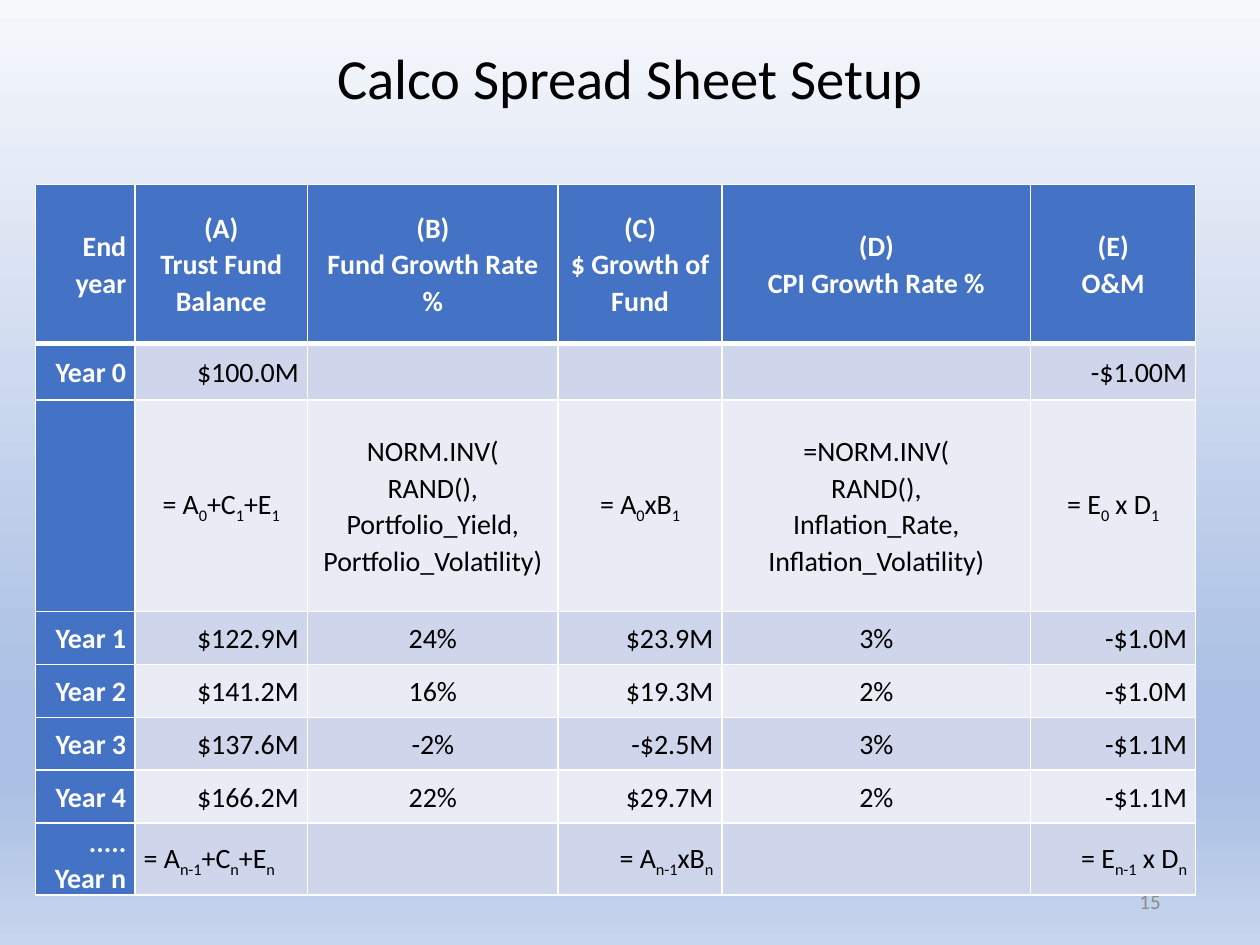
import dataclasses

import lxml.etree
import pptx
import pptx.dml.color
import pptx.enum.text
import pptx.oxml.ns
import pptx.util

Pt = pptx.util.Pt
qn = pptx.oxml.ns.qn
ALIGN = pptx.enum.text.PP_ALIGN
ANCHOR = pptx.enum.text.MSO_ANCHOR


@dataclasses.dataclass(frozen=True)
class Theme:
    font: str = "Calibri"
    ink: str = "000000"
    muted: str = "8C8C8C"
    white: str = "FFFFFF"
    accent: str = "4472C4"
    bands: tuple = ("CFD5EA", "E9EBF5")
    backdrop: tuple = ((0, "F6F8FC"), (74, "ABC0E4"), (83, "ABC0E4"), (100, "C7D5ED"))
    title_size: float = 32.4
    table_size: float = 16
    number_size: float = 12


THEME = Theme()

COLUMN_WIDTHS = (56.9, 98.6, 143.3, 93.6, 176.4, 94.3)
ROW_HEIGHTS = (90.7, 32.4, 121) + (30.2,) * 5
CELL_INSET = 5

# Line breaks separate paragraphs; tildes enclose subscripts
HEADER_ROW, FORMULA_ROW, LAST_ROW = 0, 2, 7
ROWS = (
    ("End year", "(A)\nTrust Fund Balance", "(B)\nFund Growth Rate %",
     "(C)\n$ Growth of Fund", "(D)\nCPI Growth Rate %", "(E)\nO&M"),
    ("Year 0", "$100.0M", "", "", "", "-$1.00M"),
    ("", "= A~0~+C~1~+E~1~",
     "NORM.INV(\nRAND(),\nPortfolio_Yield, Portfolio_Volatility)",
     "= A~0~xB~1~",
     "=NORM.INV(\nRAND(),\nInflation_Rate,\nInflation_Volatility)",
     "= E~0~ x D~1~"),
    ("Year 1", "$122.9M", "24%", "$23.9M", "3%", "-$1.0M"),
    ("Year 2", "$141.2M", "16%", "$19.3M", "2%", "-$1.0M"),
    ("Year 3", "$137.6M", "-2%", "-$2.5M", "3%", "-$1.1M"),
    ("Year 4", "$166.2M", "22%", "$29.7M", "2%", "-$1.1M"),
    ("..... Year n", "= A~n-1~+C~n~+E~n~", "", "= A~n-1~xB~n~", "",
     "= E~n-1~ x D~n~"),
)


def rgb(value):
    return pptx.dml.color.RGBColor.from_string(value)


def write_text(frame, text, *, size, color=THEME.ink, bold=False,
               align=ALIGN.LEFT, spacing=1.0):
    """Fill a text frame with formatted paragraphs and subscripts."""
    frame.word_wrap = True
    for index, line in enumerate(text.split("\n")):
        paragraph = frame.paragraphs[0] if index == 0 else frame.add_paragraph()
        paragraph.alignment = align
        paragraph.line_spacing = spacing
        for position, piece in enumerate(line.split("~")):
            if not piece:
                continue
            run = paragraph.add_run()
            run.text = piece
            run.font.name = THEME.font
            run.font.size = Pt(size)
            run.font.bold = bold
            run.font.color.rgb = rgb(color)
            if position % 2:
                run.font._element.set("baseline", "-25000")


def set_background(slide):
    fill = slide.background.fill
    fill.gradient()
    fill.gradient_angle = 270  # counter-clockwise, so top to bottom
    stops = next(slide.element.iter(qn("a:gsLst")))
    for stop in list(stops):
        stops.remove(stop)
    for percent, color in THEME.backdrop:
        stop = lxml.etree.SubElement(stops, qn("a:gs"), pos=str(percent * 1000))
        lxml.etree.SubElement(stop, qn("a:srgbClr"), val=color)


def add_title(slide, text):
    title = slide.shapes.title
    title.left, title.top, title.width, title.height = Pt(49.7), Pt(28.8), Pt(620.6), Pt(64.8)
    title.text_frame.vertical_anchor = ANCHOR.TOP
    title.text_frame.margin_top = 0
    write_text(title.text_frame, text, size=THEME.title_size,
               align=ALIGN.CENTER, spacing=0.9)


def add_slide_number(slide, text):
    box = slide.shapes.add_textbox(Pt(508.3), Pt(500.4), Pt(162), Pt(28.8))
    box.text_frame.vertical_anchor = ANCHOR.MIDDLE
    write_text(box.text_frame, text, size=THEME.number_size,
               color=THEME.muted, align=ALIGN.RIGHT)


def set_borders(cell, **widths):
    properties = cell._tc.get_or_add_tcPr()
    for side in ("L", "R", "T", "B"):
        line = lxml.etree.SubElement(properties, qn("a:ln" + side),
                                     w=str(Pt(widths.get(side, 1))))
        fill = lxml.etree.SubElement(line, qn("a:solidFill"))
        lxml.etree.SubElement(fill, qn("a:srgbClr"), val=THEME.white)


def cell_alignment(row, column):
    if column == 0:
        return ALIGN.RIGHT
    if row in (HEADER_ROW, FORMULA_ROW) or column in (2, 4):
        return ALIGN.CENTER
    if row == LAST_ROW and column == 1:
        return ALIGN.LEFT
    return ALIGN.RIGHT


def format_cell(cell, text, row, column):
    heading = row == HEADER_ROW or column == 0
    cell.vertical_anchor = ANCHOR.MIDDLE
    cell.margin_left = cell.margin_right = Pt(CELL_INSET)
    cell.margin_top = cell.margin_bottom = 0
    # The rule below the header is heavier than the others
    set_borders(cell, T=3 if row == HEADER_ROW + 1 else 1,
                B=3 if row == HEADER_ROW else 1)
    cell.fill.solid()
    cell.fill.fore_color.rgb = rgb(THEME.accent if heading else THEME.bands[(row - 1) % 2])
    write_text(cell.text_frame, text, size=THEME.table_size, bold=heading,
               color=THEME.white if heading else THEME.ink,
               align=cell_alignment(row, column), spacing=1.07)


def add_fund_table(slide):
    frame = slide.shapes.add_table(len(ROWS), len(COLUMN_WIDTHS), Pt(20.2), Pt(105.5),
                                   Pt(sum(COLUMN_WIDTHS)), Pt(sum(ROW_HEIGHTS)))
    table = frame.table
    for column, width in zip(table.columns, COLUMN_WIDTHS):
        column.width = Pt(width)
    for row, height in zip(table.rows, ROW_HEIGHTS):
        row.height = Pt(height)
    for row, texts in enumerate(ROWS):
        for column, text in enumerate(texts):
            format_cell(table.cell(row, column), text, row, column)


def main():
    presentation = pptx.Presentation()
    presentation.slide_width, presentation.slide_height = Pt(720), Pt(540)
    slide = presentation.slides.add_slide(presentation.slide_layouts[5])

    set_background(slide)
    add_title(slide, "Calco Spread Sheet Setup")
    add_slide_number(slide, "15")
    add_fund_table(slide)

    presentation.save("out.pptx")


if __name__ == "__main__":
    main()
